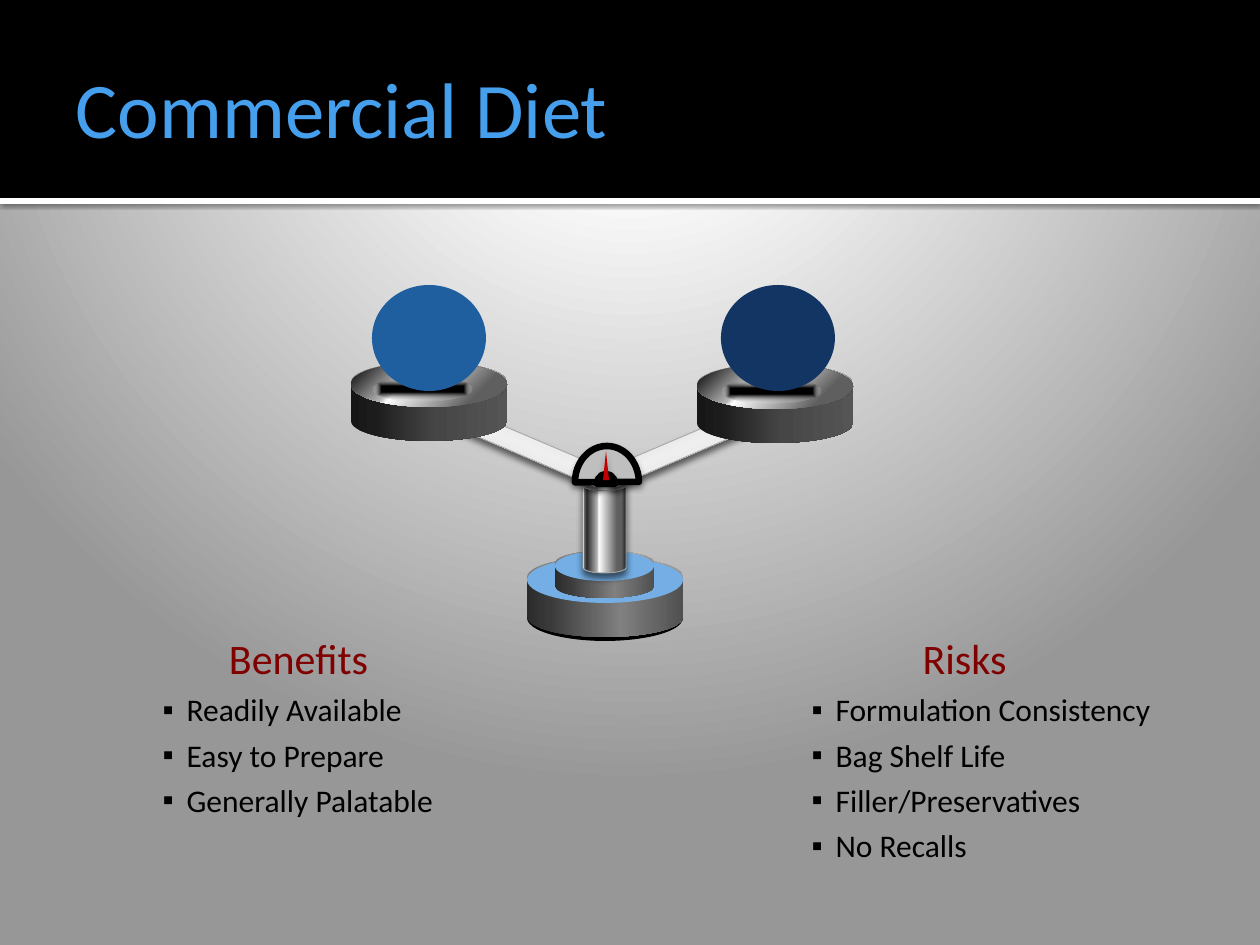
"""Build the Commercial Diet slide: a balance weighing benefits against risks."""
from lxml.etree import SubElement
from pptx import Presentation
from pptx.dml.color import RGBColor
from pptx.enum.shapes import MSO_SHAPE as Shape
from pptx.enum.text import MSO_ANCHOR as Anchor, MSO_AUTO_SIZE as AutoSize, PP_ALIGN as Align
from pptx.oxml.ns import qn
from pptx.util import Emu, Pt

TITLE = "Commercial Diet"
COLUMNS = [
    ("Benefits", ["Readily Available", "Easy to Prepare", "Generally Palatable"],
     (87, 616, 423, 210)),
    ("Risks", ["Formulation Consistency", "Bag Shelf Life", "Filler/Preservatives",
               "No Recalls"], (736, 616, 457, 256)),
]
THEME = {
    "font": "Calibri", "title": "469FED", "heading": "800000", "item": "000000",
    "title_size": 45, "heading_size": 24, "item_size": 18,
    "band": "000000", "rule": "FFFFFF", "edge": "A6A6A6", "base": "74AEE4",
    "dial": "BFBFBF", "ink": "000000", "needle": "C00000",
    "balls": ["1F5FA0", "133564"],
    "backdrop": [(0, "FFFFFF"), (20, "FFFFFF"), (100, "979797")],
    "metal": [(0, "262626"), (11, "5F5F5F"), (21, "5F5F5F"), (63, "FFFFFF"),
              (67, "B2B2B2"), (91, "292929"), (98, "777777"), (100, "EAEAEA")],
    "rod": [(0, "C4C4C4"), (50, "EFEFEF"), (100, "CFCFCF")],
    "plate_side": [(0, "161616"), (15, "1C1C1C"), (55, "464646"), (100, "555555")],
    "base_side": [(0, "2B2B2B"), (15, "3A3A3A"), (60, "808080"), (100, "505050")],
    "contact": [(24, "000000"), (100, "FFFFFF", 0)],
}
RULE_SHADOW = (60, 2.5, 0.8)
METAL_SHADOW = (56, 4, 3)
DIAL_SHADOW = (32, 3.5, 2.2)
HALF_DISC = (108.19, 215.34)


def px(length):
    return Emu(round(length * 914400 / 126))


def place(part, box):
    for name, value in zip(("left", "top", "width", "height"), box):
        setattr(part, name, px(value))


def apply(target, **values):
    for name, value in values.items():
        setattr(target, name, value)


def add(parent, tag, **attributes):
    return SubElement(parent, qn(tag), {k: str(v) for k, v in attributes.items()})


def paint(fill, properties, stops, angle=None, focus=None):
    fill.gradient()
    gradient = properties.find(qn("a:gradFill"))
    gradient.clear()
    gradient.set("rotWithShape", "1")
    stop_list = add(gradient, "a:gsLst")
    for position, colour, *alpha in stops:
        stop = add(stop_list, "a:gs", pos=position * 1000)
        tint = add(stop, "a:srgbClr", val=colour)
        for percent in alpha:
            add(tint, "a:alpha", val=percent * 1000)
    if focus:
        kind, *sides = focus
        radial = add(gradient, "a:path", path=kind)
        add(radial, "a:fillToRect", **{k: v * 1000 for k, v in zip("ltrb", sides)})
    else:
        add(gradient, "a:lin", ang=angle * 60000, scaled=0)


def draw(shapes, kind, box, fill, line=None, shadow=None, adjust=(), rotation=0,
         angle=0, focus=None):
    part = shapes.add_shape(kind, *map(px, box))
    properties = part.element.spPr
    part.rotation = rotation
    for index, value in enumerate(adjust):
        part.adjustments[index] = value
    if isinstance(fill, str):
        part.fill.solid()
        part.fill.fore_color.rgb = RGBColor.from_string(fill)
    else:
        paint(part.fill, properties, fill, angle, focus)
    if line:
        colour, width = line
        part.line.color.rgb = RGBColor.from_string(colour)
        part.line.width = Pt(width)
    else:
        part.line.fill.background()
    part.shadow.inherit = False
    if shadow:
        alpha, blur, distance = shadow
        outer = add(properties.find(qn("a:effectLst")), "a:outerShdw", blurRad=Pt(blur),
                    dist=Pt(distance), dir=5400000, algn="ctr", rotWithShape=0)
        add(add(outer, "a:srgbClr", val=THEME["ink"]), "a:alpha", val=alpha * 1000)


def draw_disc(shapes, box, rim, side, top, angle=0):
    left, upper, width, height = box
    draw(shapes, Shape.CAN, box, side, adjust=[rim / height])
    draw(shapes, Shape.OVAL, (left, upper, width, rim), top, angle=angle)


def write(paragraph, text, role):
    run = paragraph.add_run()
    run.text = text
    apply(run.font, name=THEME["font"], size=Pt(THEME[role + "_size"]))
    run.font.color.rgb = RGBColor.from_string(THEME[role])


def fill_column(body, heading, items, box):
    place(body, box)
    frame = body.text_frame
    apply(frame, word_wrap=True, auto_size=AutoSize.NONE, vertical_anchor=Anchor.TOP)
    for index, text in enumerate([heading, *items]):
        paragraph = frame.add_paragraph() if index else frame.paragraphs[0]
        layout = {"line_spacing": 1.2, "space_before": Pt(0), "space_after": Pt(0)}
        layout |= {"level": 1} if index else {"alignment": Align.CENTER}
        apply(paragraph, **layout)
        properties = paragraph._p.get_or_add_pPr()
        properties.set("marL", str(px(87) if index else 0))
        properties.set("indent", str(px(-24) if index else 0))
        if index:
            add(properties, "a:buChar", char="▪")
        else:
            add(properties, "a:buNone")
        write(paragraph, text, "item" if index else "heading")


def draw_balance(shapes):
    edge, ink = (THEME["edge"], 0.5), (THEME["ink"], 3.78)
    metal, base = THEME["metal"], THEME["base"]
    draw(shapes, Shape.OVAL, (527, 595, 156, 46), THEME["ink"])
    draw_disc(shapes, (527, 557, 156, 80), 46, THEME["base_side"], base)
    draw_disc(shapes, (555, 551, 99, 47), 30, THEME["base_side"], base)
    draw(shapes, Shape.CAN, (583, 480, 43, 93), metal, edge, METAL_SHADOW, angle=180)
    for left, rotation in ((507, 293), (684, 67)):
        draw(shapes, Shape.CAN, (left, 350, 20, 185), THEME["rod"], edge, METAL_SHADOW,
             rotation=rotation)
    for plate, ball, colour in zip(((351, 362), (697, 364)), (372, 721), THEME["balls"]):
        left, top = plate
        draw_disc(shapes, (left, top, 156, 79), 45, THEME["plate_side"], metal, 225)
        draw(shapes, Shape.OVAL, (ball + 1, top + 15, 99, 24), THEME["contact"],
             focus=("shape", 50, 50, 50, 50))
        draw(shapes, Shape.OVAL, (ball, 285, 114, 106), colour)
    for box, fill in (((575, 446, 64, 73), THEME["dial"]), ((597, 474, 18, 20), THEME["ink"])):
        draw(shapes, Shape.CHORD, box, fill, ink, DIAL_SHADOW, HALF_DISC)
    draw(shapes, Shape.ISOSCELES_TRIANGLE, (603, 451, 6, 29), THEME["needle"],
         shadow=DIAL_SHADOW)


def main():
    deck = Presentation()
    apply(deck, slide_width=px(1260), slide_height=px(945))
    slide = deck.slides.add_slide(deck.slide_layouts[3])
    paint(slide.background.fill, slide.element.cSld.bg.bgPr, THEME["backdrop"],
          focus=("circle", 10, -25, 10, 125))
    draw(slide.shapes, Shape.RECTANGLE, (0, 198, 1260, 6), THEME["rule"], shadow=RULE_SHADOW)
    draw(slide.shapes, Shape.RECTANGLE, (0, 0, 1260, 198), THEME["band"])
    title, *bodies = slide.placeholders
    for part in (title, *bodies):
        slide.shapes.element.append(part.element)
    place(title, (63, 21, 1134, 173))
    apply(title.text_frame, vertical_anchor=Anchor.MIDDLE, margin_left=px(13),
          margin_right=px(6), auto_size=AutoSize.NONE)
    heading = title.text_frame.paragraphs[0]
    heading.alignment = Align.LEFT
    write(heading, TITLE, "title")
    for body, column in zip(bodies, COLUMNS):
        fill_column(body, *column)
    draw_balance(slide.shapes.add_group_shape().shapes)
    deck.save("out.pptx")


if __name__ == "__main__":
    main()
